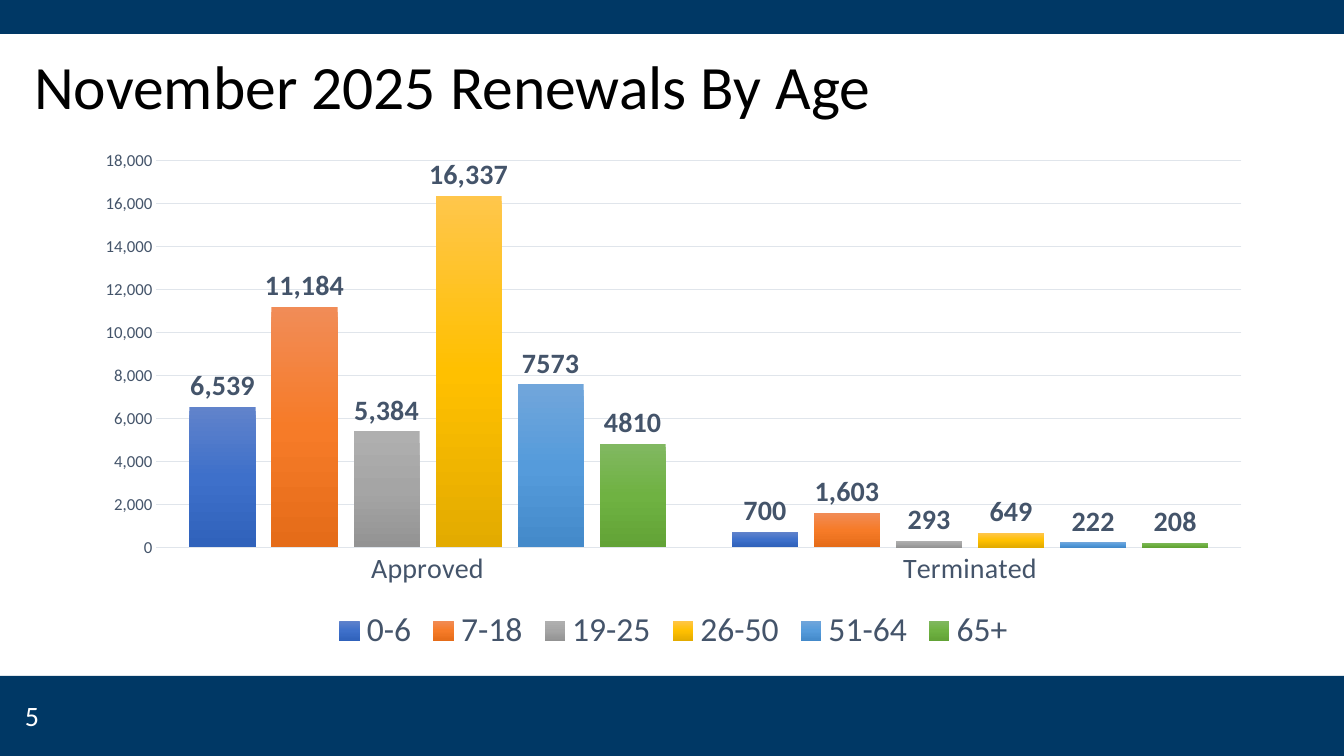
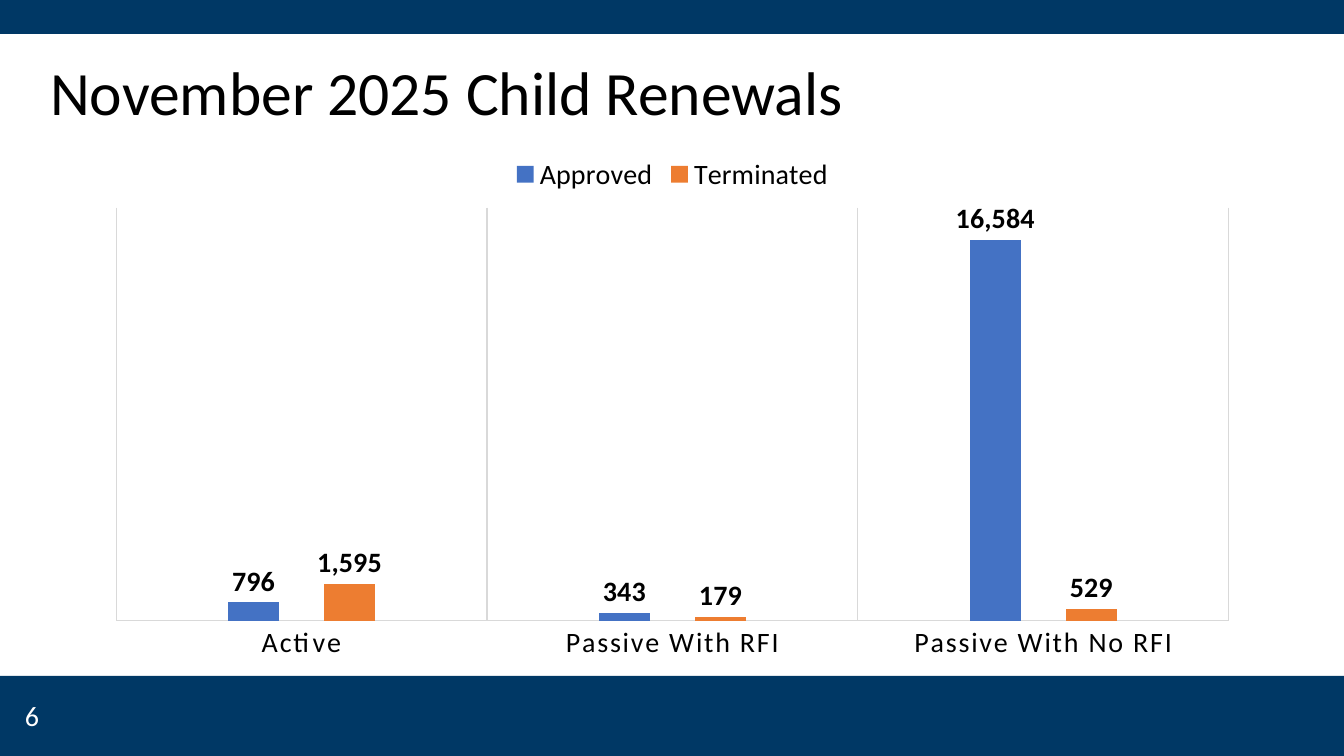
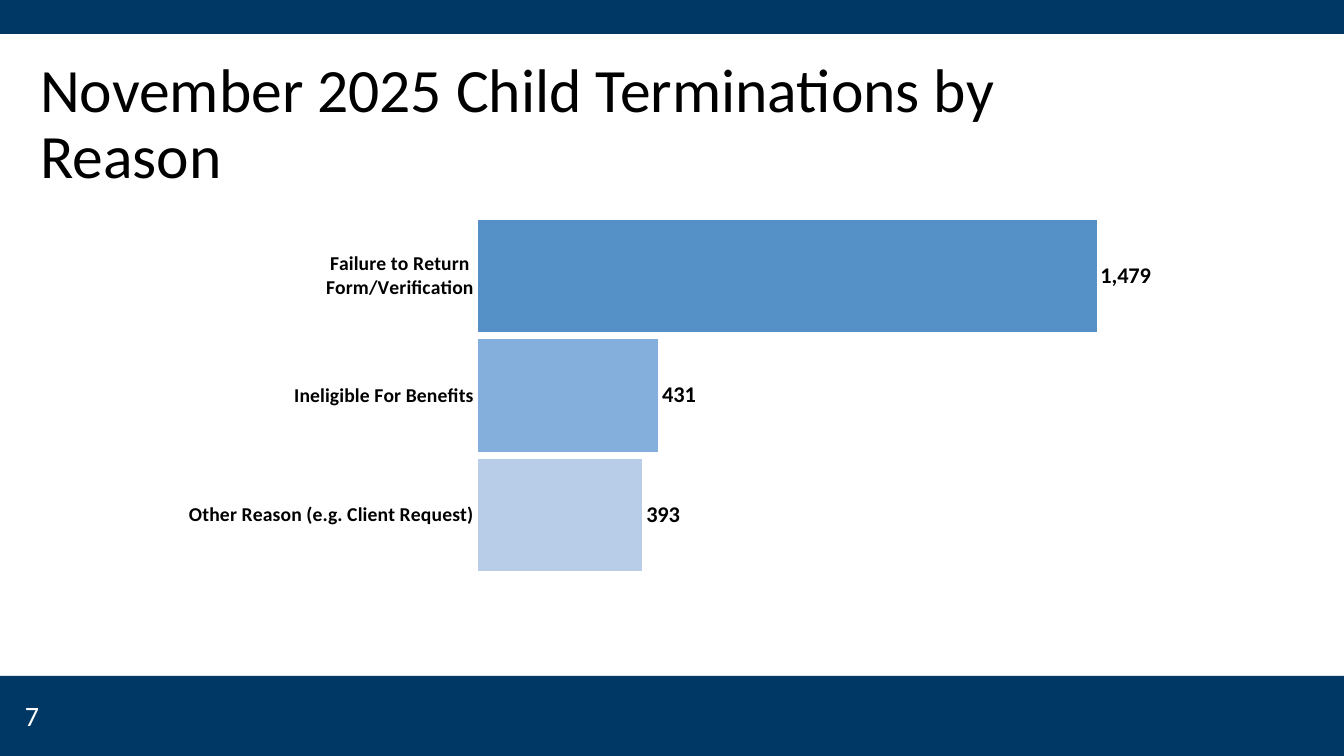
"""Build three slides of November 2025 renewal charts."""
from lxml import etree
from pptx import Presentation
from pptx.chart.data import CategoryChartData
from pptx.dml.color import RGBColor
from pptx.enum.chart import XL_CHART_TYPE, XL_LABEL_POSITION, XL_LEGEND_POSITION, XL_TICK_MARK
from pptx.enum.shapes import MSO_SHAPE
from pptx.enum.text import MSO_ANCHOR, MSO_AUTO_SIZE, PP_ALIGN
from pptx.oxml.ns import qn
from pptx.util import Pt

COLUMN, BAR = XL_CHART_TYPE.COLUMN_CLUSTERED, XL_CHART_TYPE.BAR_CLUSTERED
OUT_END = XL_LABEL_POSITION.OUTSIDE_END
TOP, BOTTOM = XL_LEGEND_POSITION.TOP, XL_LEGEND_POSITION.BOTTOM
NO_TICK, IN_TICK = XL_TICK_MARK.NONE, XL_TICK_MARK.INSIDE

NAVY = RGBColor(0x00, 0x38, 0x65)
WHITE = RGBColor(0xFF, 0xFF, 0xFF)
BLACK = RGBColor(0x00, 0x00, 0x00)
SLATE = RGBColor(0x44, 0x54, 0x6A)
MIST = RGBColor(0xE0, 0xE5, 0xEB)
GREY = RGBColor(0xD9, 0xD9, 0xD9)
BLUE = RGBColor(0x44, 0x72, 0xC4)
ORANGE = RGBColor(0xED, 0x7D, 0x31)
TINTS = [RGBColor(0xB8, 0xCD, 0xE8), RGBColor(0x84, 0xAE, 0xDC), RGBColor(0x55, 0x91, 0xC7)]

FONT = "Calibri"
COMMA = "#,##0"
EMU = 914400 / 100.8
WIDE, HIGH = 1344, 756
BANDS = [(0, 0, WIDE, 34), (0, 676, WIDE, 80)]
PAGE_BOX = (15, 694, 302, 40)

AGES = [
    ("0-6", (6539, 700), ("6183CB", "3E70CA", "3062BB"), COMMA),
    ("7-18", (11184, 1603), ("F18C57", "F67B28", "E56C19"), COMMA),
    ("19-25", (5384, 293), ("AFAFAF", "A5A5A5", "939393"), COMMA),
    ("26-50", (16337, 649), ("FFC64B", "FFC000", "E3AB00"), COMMA),
    ("51-64", (7573, 222), ("71A6DB", "559BDB", "448ACA"), "General"),
    ("65+", (4810, 208), ("81B861", "6FB242", "62A336"), "General"),
]
CHILD = [
    ("Approved", (796, 343, 16584), BLUE, COMMA),
    ("Terminated", (1595, 179, 529), ORANGE, COMMA),
]
CAUSES = [("Terminations", (393, 431, 1479, None), TINTS, COMMA)]

SLIDES = [
    dict(page="5", title="November 2025 Renewals By Age", spot=(24, 17, 1159, 146),
         anchor=MSO_ANCHOR.MIDDLE, kind=COLUMN, box=(82, 140, 1183, 518),
         cats=("Approved", "Terminated"), rows=AGES, ink=SLATE, size=20,
         gap=100, lap=-24, top=18000, line=MIST, legend=(BOTTOM, 24)),
    dict(page="6", title="November 2025 Child Renewals", spot=(40, 23, 1159, 146),
         anchor=MSO_ANCHOR.MIDDLE, kind=COLUMN, box=(93, 144, 1159, 526),
         cats=("Active", "Passive With RFI", "Passive With No RFI"), rows=CHILD,
         ink=BLACK, size=20, gap=444, lap=-90, top=18000, line=GREY, legend=(TOP, 20)),
    dict(page="7", title="November 2025 Child Terminations by Reason", spot=(30, 54, 1159, 120),
         anchor=MSO_ANCHOR.TOP, kind=BAR, box=(187, 97, 970, 562),
         cats=("Other Reason (e.g. Client Request)", "Ineligible For Benefits",
               "Failure to Return Form/Verification", ""), rows=CAUSES,
         ink=BLACK, size=16, gap=6, lap=0, top=1600, line=None, legend=None),
]


def px(*sizes):
    return [round(size * EMU) for size in sizes]


def style(font, size, ink, bold=False):
    font.name, font.size, font.bold = FONT, Pt(size), bold
    font.color.rgb = ink


def rule(line, ink):
    line.width = Pt(0.75)
    line.color.rgb = ink


def add_bands(slide, tree):
    for i, box in enumerate(BANDS):
        band = slide.shapes.add_shape(MSO_SHAPE.RECTANGLE, *px(*box))
        band.shadow.inherit = False
        band.fill.solid()
        band.fill.fore_color.rgb = NAVY
        band.line.fill.background()
        band.name = f"Band {i + 1}"
        band.element.nvSpPr.cNvPr.set("id", str(20 + i))
        tree.insert(2 + i, band.element)


def add_title(slide, item):
    title = slide.shapes.title
    title.left, title.top, title.width, title.height = px(*item["spot"])
    frame = title.text_frame
    frame.text = item["title"]
    frame.auto_size = MSO_AUTO_SIZE.NONE
    frame.vertical_anchor = item["anchor"]
    para = frame.paragraphs[0]
    para.alignment, para.line_spacing = PP_ALIGN.LEFT, 0.9
    style(para.font, 44, BLACK)


def add_page(slide, page):
    frame = slide.shapes.add_textbox(*px(*PAGE_BOX)).text_frame
    frame.word_wrap = True
    frame.text = page
    style(frame.paragraphs[0].font, 20, WHITE)


def fill_grad(series, stops):
    series.format.fill.gradient()
    series.format.fill.gradient_angle = 270
    bag = series.format.fill.gradient_stops
    bag[0].color.rgb = RGBColor.from_string(stops[0])
    bag[1].color.rgb = RGBColor.from_string(stops[2])


def add_mid(chart, rows):
    for bag, row in zip(chart.element.xpath(".//c:ser/c:spPr//a:gsLst"), rows):
        stop = etree.Element(qn("a:gs"), pos="50000")
        etree.SubElement(stop, qn("a:srgbClr"), val=row[2][1])
        bag.insert(1, stop)


def fill_solid(fill, ink):
    fill.solid()
    fill.fore_color.rgb = ink


def set_plot(chart, **place):
    area = chart.element.find(".//" + qn("c:plotArea"))
    for old in area.findall(qn("c:layout")):
        area.remove(old)
    layout = etree.Element(qn("c:layout"))
    area.insert(0, layout)
    manual = etree.SubElement(layout, qn("c:manualLayout"))
    parts = dict(layoutTarget="inner", xMode="edge", yMode="edge", **place)
    for key, value in parts.items():
        etree.SubElement(manual, qn("c:" + key), val=str(value))


def add_chart(slide, item):
    data = CategoryChartData(number_format=COMMA)
    data.categories = item["cats"]
    for name, values, _, _ in item["rows"]:
        data.add_series(name, values)
    chart = slide.shapes.add_chart(item["kind"], *px(*item["box"]), data).chart
    style(chart.font, 10, BLACK)
    chart.has_title = False
    chart.has_legend = item["legend"] is not None
    if chart.has_legend:
        spot, size = item["legend"]
        chart.legend.position = spot
        chart.legend.include_in_layout = False
        style(chart.legend.font, size, item["ink"])

    plot = chart.plots[0]
    plot.gap_width, plot.overlap = item["gap"], item["lap"]
    plot.vary_by_categories = False
    for series, (_, _, paint, code) in zip(plot.series, item["rows"]):
        series.invert_if_negative = False
        if isinstance(paint, RGBColor):
            fill_solid(series.format.fill, paint)
        elif isinstance(paint, tuple):
            fill_grad(series, paint)
        else:
            for i, ink in enumerate(paint):
                fill_solid(series.points[i].format.fill, ink)
        labels = series.data_labels
        labels.show_value, labels.position = True, OUT_END
        labels.number_format, labels.number_format_is_linked = code, False
        style(labels.font, item["size"], item["ink"], True)

    cat, val = chart.category_axis, chart.value_axis
    cat.major_tick_mark = val.major_tick_mark = NO_TICK
    style(cat.tick_labels.font, 20, item["ink"])
    if item["line"] is not None:
        rule(cat.format.line, item["line"])
    val.minimum_scale, val.maximum_scale = 0, item["top"]
    val.has_major_gridlines = False
    return chart


def finish_ages(chart):
    add_mid(chart, AGES)
    val = chart.value_axis
    val.major_unit = 2000
    val.has_major_gridlines = True
    rule(val.major_gridlines.format.line, MIST)
    val.format.line.fill.background()
    val.tick_labels.number_format = COMMA
    val.tick_labels.number_format_is_linked = False
    style(val.tick_labels.font, 12, SLATE)


def finish_child(chart):
    chart.value_axis.visible = False
    cat = chart.category_axis
    cat.has_major_gridlines = True
    rule(cat.major_gridlines.format.line, GREY)
    for font in chart.element.xpath(".//c:catAx//a:defRPr"):
        font.set("spc", "120")


def finish_causes(chart):
    chart.value_axis.visible = False
    cat = chart.category_axis
    cat.major_tick_mark = IN_TICK
    cat.format.line.fill.background()
    style(cat.tick_labels.font, 14, BLACK, True)
    set_plot(chart, x=0.3, y=0, w=0.69, h=0.85)


def main():
    deck = Presentation()
    deck.slide_width, deck.slide_height = px(WIDE, HIGH)
    layout = deck.slide_layouts[5]
    finish = (finish_ages, finish_child, finish_causes)
    for i, (item, end) in enumerate(zip(SLIDES, finish)):
        slide = deck.slides.add_slide(layout)
        if i == 0:
            add_bands(slide, layout.shapes.element)
        add_title(slide, item)
        end(add_chart(slide, item))
        add_page(slide, item["page"])
    deck.save("out.pptx")


if __name__ == "__main__":
    main()
